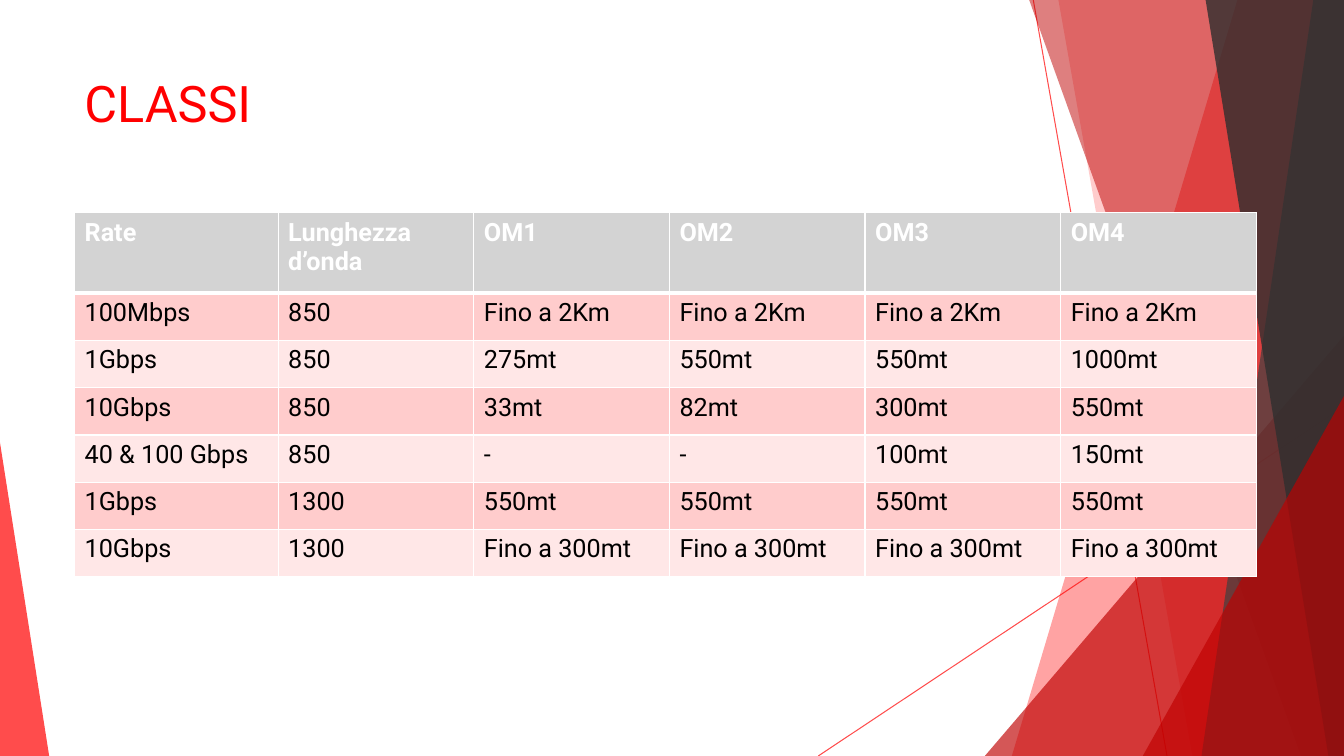
"""Build the CLASSI slide: fibre classes and their reach by rate and wavelength."""
import lxml.etree
import pptx
import pptx.dml.color
import pptx.enum.shapes
import pptx.enum.text
import pptx.oxml.ns
import pptx.util

Cm = pptx.util.Cm
Pt = pptx.util.Pt
qn = pptx.oxml.ns.qn

FONT = "Roboto"
COLOURS = {
    "red": "FF0000", "dark red": "BF0000", "grey": "3F3F3F", "charcoal": "2F2F2F",
    "header": "D3D3D3", "odd": "FFCCCC", "even": "FFE7E7", "white": "FFFFFF", "black": "000000",
}
WIDTH, HEIGHT = 33.87, 19.05


def colour(name):
    return pptx.dml.color.RGBColor.from_string(COLOURS[name])


def paint(fill, name, opacity):
    fill.solid()
    fill.fore_color.rgb = colour(name)
    for tone in fill._xPr.iter(qn("a:srgbClr")):
        lxml.etree.SubElement(tone, qn("a:alpha"), val=str(opacity * 1000))


deck = pptx.Presentation()
deck.slide_width, deck.slide_height = Cm(WIDTH), Cm(HEIGHT)
page = deck.slides.add_slide(deck.slide_layouts[6])

for start_x, start_y, end_x in [(26.04, 0, 29.41), (WIDTH, 10.24, 20.62)]:
    ray = page.shapes.add_connector(
        pptx.enum.shapes.MSO_CONNECTOR.STRAIGHT, Cm(start_x), Cm(start_y), Cm(end_x), Cm(HEIGHT))
    ray.line.width = Pt(0.75)
    paint(ray.line.fill, "red", 70)
    lxml.etree.SubElement(ray._element.spPr, qn("a:effectLst"))

shards = [
    ("band", "red", 36, (31.19, 25.5)),
    ("band", "red", 20, (26.67, 30.05)),
    ("wedge", "dark red", 66, (24.82, 8.46, 9.05, 1)),
    ("band", "dark red", 50, (25.93, 32.79)),
    ("band", "grey", 70, (33.1, 30.28)),
    ("band", "charcoal", 80, (30.38, 33.48)),
    ("wedge", "dark red", 66, (28.8, 9.98, 5.07, 1)),
    ("wedge", "red", 70, (0, 11.15, 1.24, 0)),
]
for kind, name, opacity, place in shards:
    if kind == "band":
        top_x, bottom_x = place
        outline = page.shapes.build_freeform(Cm(top_x), Cm(-0.02))
        outline.add_line_segments(
            [(Cm(WIDTH), Cm(-0.02)), (Cm(WIDTH), Cm(HEIGHT)), (Cm(bottom_x), Cm(HEIGHT))])
        shard = outline.convert_to_shape()
    else:
        left, top, width, apex = place
        shard = page.shapes.add_shape(
            pptx.enum.shapes.MSO_SHAPE.ISOSCELES_TRIANGLE,
            Cm(left), Cm(top), Cm(width), Cm(HEIGHT - top))
        shard.adjustments[0] = apex
    shard.shadow.inherit = False
    shard.line.fill.background()
    paint(shard.fill, name, opacity)

title = page.shapes.add_textbox(Cm(1.88), Cm(1.7), Cm(23.88), Cm(3.66))
title.text_frame.word_wrap = True
title.text_frame.vertical_anchor = pptx.enum.text.MSO_ANCHOR.TOP
para = title.text_frame.paragraphs[0]
para.text = "CLASSI"
para.font.name, para.font.size = FONT, Pt(36)
para.font.color.rgb = colour("red")

classes = [
    ["Rate", "Lunghezza d’onda", "OM1", "OM2", "OM3", "OM4"],
    ["100Mbps", "850"] + ["Fino a 2Km"] * 4,
    ["1Gbps", "850", "275mt", "550mt", "550mt", "1000mt"],
    ["10Gbps", "850", "33mt", "82mt", "300mt", "550mt"],
    ["40 & 100 Gbps", "850", "-", "-", "100mt", "150mt"],
    ["1Gbps", "1300"] + ["550mt"] * 4,
    ["10Gbps", "1300"] + ["Fino a 300mt"] * 4,
]
table = page.shapes.add_table(7, 6, Cm(1.88), Cm(5.36), Cm(29.78), Cm(9.17)).table
for index, column in enumerate(table.columns):
    column.width = Cm(4.93 if index else 5.13)
for index, row in enumerate(table.rows):
    row.height = Cm(1.19 if index else 2.03)
    band = "header" if index == 0 else "odd" if index % 2 else "even"
    for cell, words in zip(row.cells, classes[index]):
        properties = cell._tc.get_or_add_tcPr()
        for side in ("lnL", "lnR", "lnT", "lnB"):
            thick = (index, side) in [(0, "lnB"), (1, "lnT")]
            border = lxml.etree.SubElement(
                properties, qn(f"a:{side}"), w=str(Pt(3 if thick else 1)))
            solid = lxml.etree.SubElement(border, qn("a:solidFill"))
            lxml.etree.SubElement(solid, qn("a:srgbClr"), val=COLOURS["white"])
        cell.fill.solid()
        cell.fill.fore_color.rgb = colour(band)
        para = cell.text_frame.paragraphs[0]
        para.text = words
        para.font.name, para.font.size = FONT, Pt(18)
        para.font.bold = index == 0
        para.font.color.rgb = colour("black" if index else "white")

deck.save("out.pptx")
